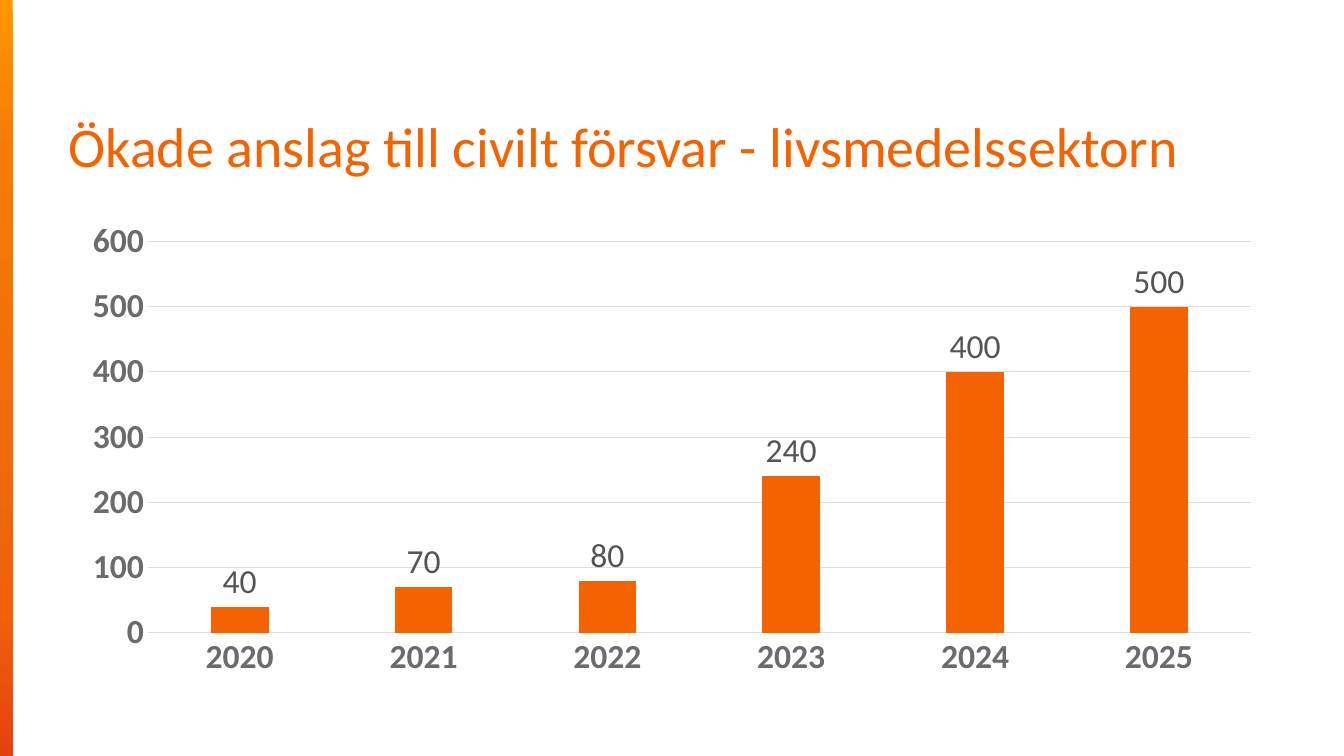
"""Build a slide with a column chart of rising civil defence grants."""
import lxml.etree
import pptx
import pptx.chart.data
import pptx.dml.color
import pptx.enum.chart
import pptx.enum.shapes
import pptx.enum.text
import pptx.oxml.ns
import pptx.util

Cm = pptx.util.Cm
Pt = pptx.util.Pt
RGB = pptx.dml.color.RGBColor
qn = pptx.oxml.ns.qn

ORANGE = RGB(0xF5, 0x62, 0x00)
GREY = RGB(0x6B, 0x6B, 0x6B)
DARK = RGB(0x54, 0x54, 0x54)
INK = RGB(0x1B, 0x1B, 0x1B)
RULE = RGB(0xDD, 0xDD, 0xDD)
STOPS = [
    (0, RGB(0xFF, 0x96, 0x00)),
    (20, RGB(0xF7, 0x7A, 0x05)),
    (81, RGB(0xF0, 0x61, 0x0A)),
    (100, RGB(0xE6, 0x40, 0x11)),
]
GRANTS = {"2020": 40, "2021": 70, "2022": 80, "2023": 240, "2024": 400, "2025": 500}


class Deck:
    """Hold the style and the current slide."""

    def __init__(self, slide, face="Calibri"):
        self.slide = slide
        self.face = face

    def style(self, font, size, color, bold=False):
        font.name = self.face
        font.size = Pt(size)
        font.bold = bold
        font.color.rgb = color

    def rule(self, line):
        line.color.rgb = RULE
        line.width = Pt(0.75)

    def band(self, box, stops):
        kind = pptx.enum.shapes.MSO_SHAPE.RECTANGLE
        shape = self.slide.shapes.add_shape(kind, *map(Cm, box))
        shape.shadow.inherit = False
        shape.line.fill.background()
        shape.fill.gradient()
        shape.fill.gradient_angle = 270
        ramp = next(shape.element.iter(qn("a:gsLst")))
        for stop in list(ramp):
            ramp.remove(stop)
        for place, color in stops:
            stop = lxml.etree.SubElement(ramp, qn("a:gs"), pos=str(place * 1000))
            lxml.etree.SubElement(stop, qn("a:srgbClr"), val=str(color))

    def title(self, box, text):
        frame = self.slide.shapes.add_textbox(*map(Cm, box)).text_frame
        frame.word_wrap = True
        frame.vertical_anchor = pptx.enum.text.MSO_ANCHOR.BOTTOM
        frame.margin_left = frame.margin_right = 0
        frame.margin_top = frame.margin_bottom = 0
        para = frame.paragraphs[0]
        para.line_spacing = 0.9
        run = para.add_run()
        run.text = text
        self.style(run.font, 40, ORANGE)

    def axis(self, axis):
        axis.major_tick_mark = pptx.enum.chart.XL_TICK_MARK.NONE
        axis.minor_tick_mark = pptx.enum.chart.XL_TICK_MARK.NONE
        self.style(axis.tick_labels.font, 24, GREY, True)

    def chart(self, box, values):
        data = pptx.chart.data.CategoryChartData()
        data.categories = list(values)
        data.add_series("Series 1", list(values.values()))
        kind = pptx.enum.chart.XL_CHART_TYPE.COLUMN_CLUSTERED
        chart = self.slide.shapes.add_chart(kind, *map(Cm, box), data).chart
        chart.has_legend = False
        chart.has_title = False
        self.style(chart.font, 24, INK)

        years, scale = chart.category_axis, chart.value_axis
        self.axis(years)
        self.rule(years.format.line)
        self.axis(scale)
        scale.format.line.fill.background()
        scale.minimum_scale = 0
        scale.maximum_scale = 600
        scale.major_unit = 100
        scale.has_major_gridlines = True
        self.rule(scale.major_gridlines.format.line)

        plot = chart.plots[0]
        plot.vary_by_categories = False
        plot.gap_width = 219
        plot.overlap = -27
        bars = plot.series[0]
        bars.format.fill.solid()
        bars.format.fill.fore_color.rgb = ORANGE
        labels = bars.data_labels
        labels.show_value = True
        labels.position = pptx.enum.chart.XL_LABEL_POSITION.OUTSIDE_END
        self.style(labels.font, 24, DARK)


def main():
    show = pptx.Presentation()
    show.slide_width = Cm(33.87)
    show.slide_height = Cm(19.05)
    deck = Deck(show.slides.add_slide(show.slide_layouts[6]))
    deck.band((0, 0, 0.32, 19.05), STOPS)
    deck.chart((1.73, 5.33, 30.4, 11.99), GRANTS)
    deck.title((1.73, 1.02, 30.38, 3.5), "Ökade anslag till civilt försvar - livsmedelssektorn")
    show.save("out.pptx")


if __name__ == "__main__":
    main()
